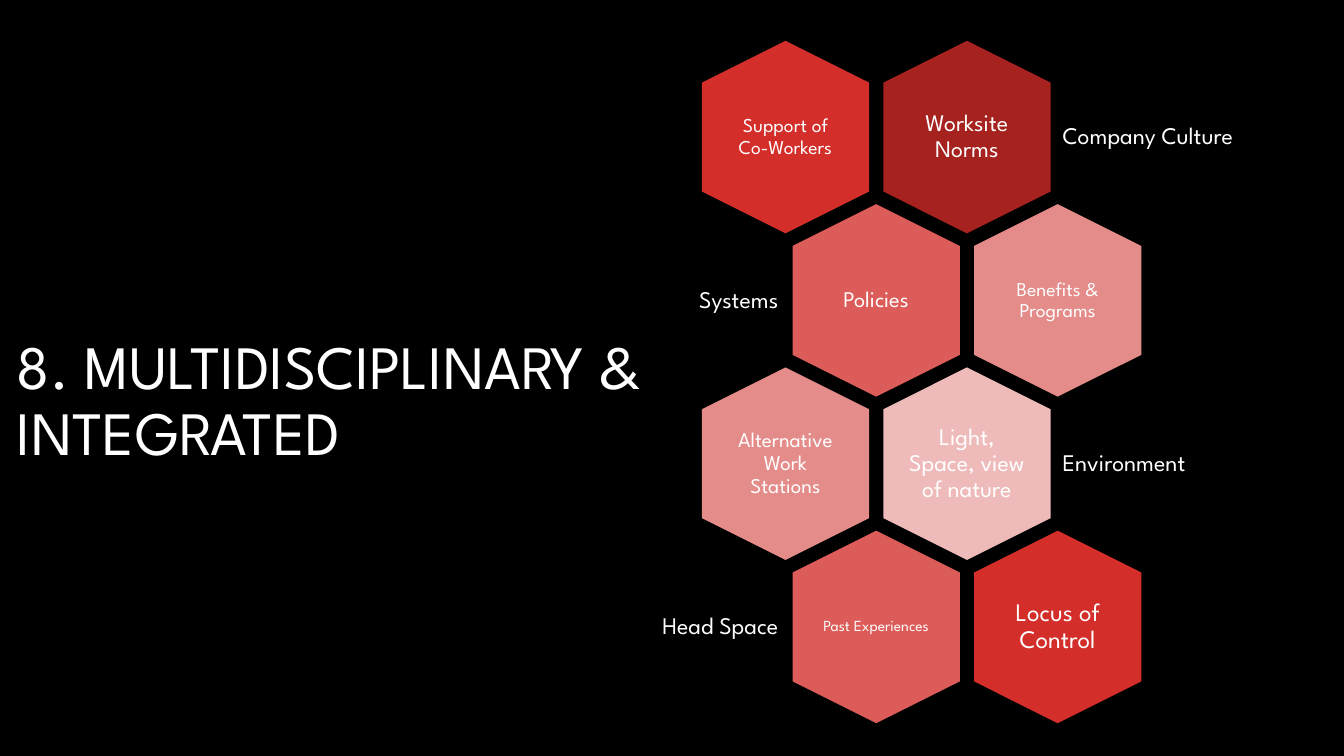
from dataclasses import dataclass

from pptx import Presentation
from pptx.dml.color import RGBColor
from pptx.enum.shapes import MSO_SHAPE
from pptx.enum.text import MSO_ANCHOR, PP_ALIGN
from pptx.util import Inches, Pt


@dataclass(frozen=True)
class Theme:
    font: str = "League Spartan"
    back: str = "000000"
    text: str = "FFFFFF"
    dark: str = "A5221E"
    red: str = "D32E29"
    rose: str = "DC5C59"
    pink: str = "E48C8A"
    pale: str = "EEBABA"
    title: int = 44
    label: int = 17


THEME = Theme()
TITLE = "8. MULTIDISCIPLINARY & INTEGRATED"
# Each row: side label, then (text, size, fill) from left to right
ROWS = [
    ("Company Culture", [("Support of Co-Workers", 14, THEME.red),
                         ("Worksite Norms", 17, THEME.dark)]),
    ("Systems", [("Policies", 16, THEME.rose),
                 ("Benefits & Programs", 14, THEME.pink)]),
    ("Environment", [("Alternative Work Stations", 15, THEME.pink),
                     ("Light, Space, view of nature", 17, THEME.pale)]),
    ("Head Space", [("Past Experiences", 11, THEME.rose),
                    ("Locus of Control", 18, THEME.red)]),
]

# Honeycomb: first centre, steps between centres, and part sizes
LEFT, TOP = 7.79, 1.36
STEP_X, STEP_Y = 1.8, 1.62
HEX_W, HEX_H = 1.91, 1.66
TEXT_W, TEXT_H = 1.15, 1.32
LABEL_H = 1.15
# Label left, width and alignment for even and odd rows
SIDES = [(10.47, 2.13, PP_ALIGN.LEFT), (5.72, 2.07, PP_ALIGN.RIGHT)]


def add_text(slide, text, box, size, align, pad):
    frame = slide.shapes.add_textbox(*map(Inches, box)).text_frame
    frame.word_wrap = True
    frame.vertical_anchor = MSO_ANCHOR.MIDDLE
    frame.margin_left = frame.margin_right = Inches(pad)
    frame.margin_top = frame.margin_bottom = Inches(pad)
    para = frame.paragraphs[0]
    para.text = text
    para.alignment = align
    para.line_spacing = 0.9
    para.font.name = THEME.font
    para.font.size = Pt(size)
    para.font.color.rgb = RGBColor.from_string(THEME.text)


def add_cell(slide, x, y, text, size, fill):
    """Add a hexagon centred on x, y with upright text over it."""
    box = (x - HEX_W / 2, y - HEX_H / 2, HEX_W, HEX_H)
    cell = slide.shapes.add_shape(MSO_SHAPE.HEXAGON, *map(Inches, box))
    cell.rotation = 90
    cell.adjustments[0] = 0.25
    cell.shadow.inherit = False
    cell.fill.solid()
    cell.fill.fore_color.rgb = RGBColor.from_string(fill)
    cell.line.fill.background()
    box = (x - TEXT_W / 2, y - TEXT_H / 2, TEXT_W, TEXT_H)
    add_text(slide, text, box, size, PP_ALIGN.CENTER, 0)


def main():
    deck = Presentation()
    deck.slide_width, deck.slide_height = Inches(13.33), Inches(7.5)
    slide = deck.slides.add_slide(deck.slide_layouts[6])
    slide.background.fill.solid()
    slide.background.fill.fore_color.rgb = RGBColor.from_string(THEME.back)

    add_text(slide, TITLE, (0.07, 1.94, 6.53, 4.11), THEME.title,
             PP_ALIGN.LEFT, 0.1)
    for row, (label, cells) in enumerate(ROWS):
        odd = row % 2
        y = TOP + row * STEP_Y
        for col, cell in enumerate(cells):
            add_cell(slide, LEFT + (col + odd / 2) * STEP_X, y, *cell)
        left, width, align = SIDES[odd]
        add_text(slide, label, (left, y - LABEL_H / 2, width, LABEL_H),
                 THEME.label, align, 0.07)
    deck.save("out.pptx")


if __name__ == "__main__":
    main()
